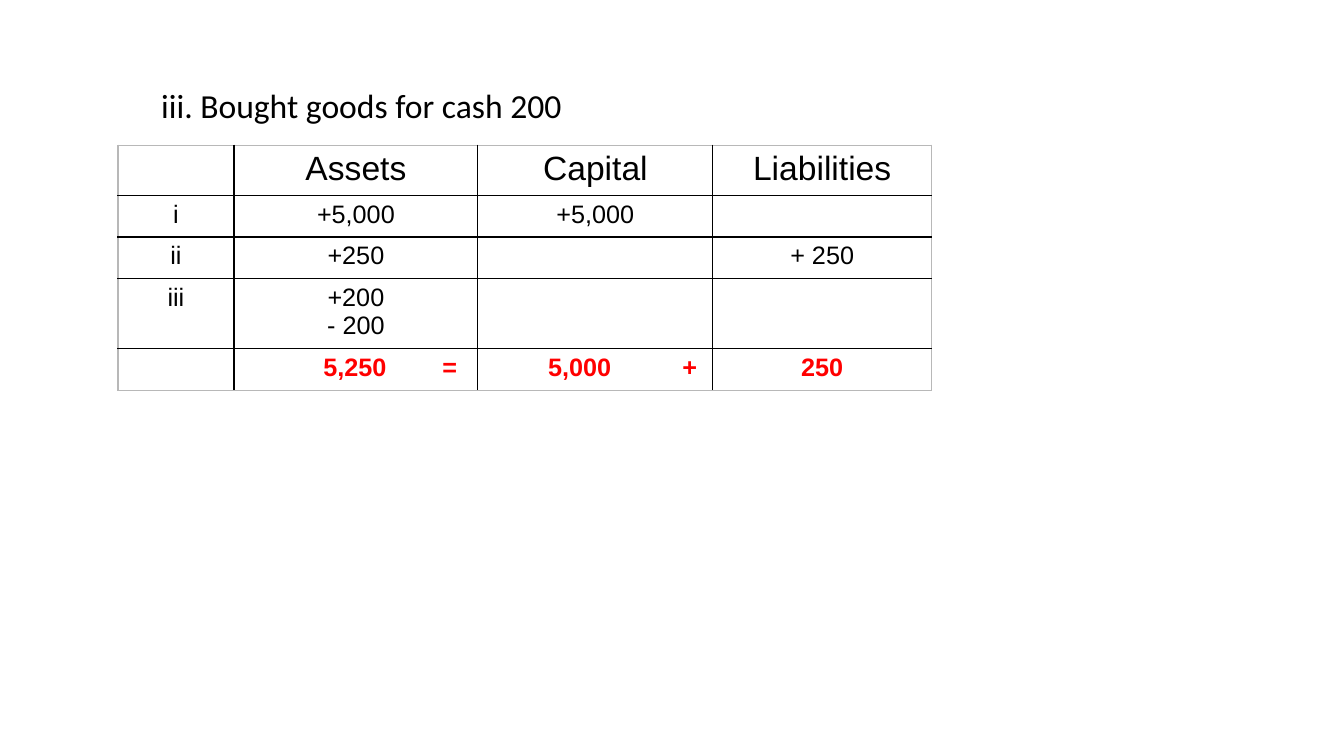
from lxml import etree
from pptx import Presentation, util as u
from pptx.dml.color import RGBColor
from pptx.enum import text
from pptx.oxml.ns import qn

# Content
HEADING = "iii. Bought goods for cash 200"
LEDGER = [
    ["", "Assets", "Capital", "Liabilities"],
    ["i", "+5,000", "+5,000", ""],
    ["ii", "+250", "", "+ 250"],
    ["iii", "+200\n- 200", "", ""],
    ["", "\t5,250\t=", "\t5,000\t+", "250"],
]
COLORS = {"ink": "000000", "total": "FF0000", "edge": "B8B8B8", "paper": "FFFFFF"}

# Grid, in inches
COLUMNS = [1.15, 2.42, 2.33, 2.17]
ROWS = [0.5, 0.41, 0.41, 0.7, 0.41]
TABLE_LEFT, TABLE_TOP = 1.17, 1.44
TOTAL_TABS = {1: (1.1, 2.04), 2: (0.91, 2.0)}  # centres of amount and sign
LAST_ROW, LAST_COL = len(ROWS) - 1, len(COLUMNS) - 1


def style(paragraph, font, size, color="ink", bold=False):
    for run in paragraph.runs:
        run.font.name, run.font.size, run.font.bold = font, u.Pt(size), bold
        run.font.color.rgb = RGBColor.from_string(COLORS[color])


def add_borders(cell, row, col):
    outer = {"lnL": col == 0, "lnR": col == LAST_COL,
             "lnT": row == 0, "lnB": row == LAST_ROW}
    props = cell._tc.get_or_add_tcPr()
    for side, is_edge in outer.items():
        line = etree.SubElement(props, qn("a:" + side), w=str(u.Pt(1)))
        fill = etree.SubElement(line, qn("a:solidFill"))
        etree.SubElement(fill, qn("a:srgbClr"),
                         val=COLORS["edge" if is_edge else "ink"])


def add_center_tabs(paragraph, stops):
    tabs = etree.SubElement(paragraph._p.get_or_add_pPr(), qn("a:tabLst"))
    for stop in stops:
        etree.SubElement(tabs, qn("a:tab"), pos=str(u.Inches(stop)), algn="ctr")


prs = Presentation()
prs.slide_width, prs.slide_height = u.Inches(13.33), u.Inches(7.5)
slide = prs.slides.add_slide(prs.slide_layouts[6])

# Heading
heading = slide.shapes.add_textbox(
    u.Inches(1.5), u.Inches(0.79), u.Inches(7.82), u.Inches(0.51)).text_frame
heading.word_wrap = True
heading.text = HEADING
style(heading.paragraphs[0], "Calibri", 24)

# Accounting equation table
ledger = slide.shapes.add_table(
    len(ROWS), len(COLUMNS), u.Inches(TABLE_LEFT), u.Inches(TABLE_TOP),
    u.Inches(sum(COLUMNS)), u.Inches(sum(ROWS))).table
ledger.first_row = ledger.horz_banding = False
for column, width in zip(ledger.columns, COLUMNS):
    column.width = u.Inches(width)
for ledger_row, height in zip(ledger.rows, ROWS):
    ledger_row.height = u.Inches(height)

for row, entries in enumerate(LEDGER):
    is_total = row == LAST_ROW
    for col, entry in enumerate(entries):
        cell = ledger.cell(row, col)
        add_borders(cell, row, col)
        cell.fill.solid()
        cell.fill.fore_color.rgb = RGBColor.from_string(COLORS["paper"])
        cell.text_frame.text = entry
        for paragraph in cell.text_frame.paragraphs:
            if is_total and col in TOTAL_TABS:
                paragraph.alignment = text.PP_ALIGN.LEFT
                add_center_tabs(paragraph, TOTAL_TABS[col])
            else:
                paragraph.alignment = text.PP_ALIGN.CENTER
            style(paragraph, "Arial", 24 if row == 0 else 18,
                  "total" if is_total else "ink", is_total)

prs.save("out.pptx")
